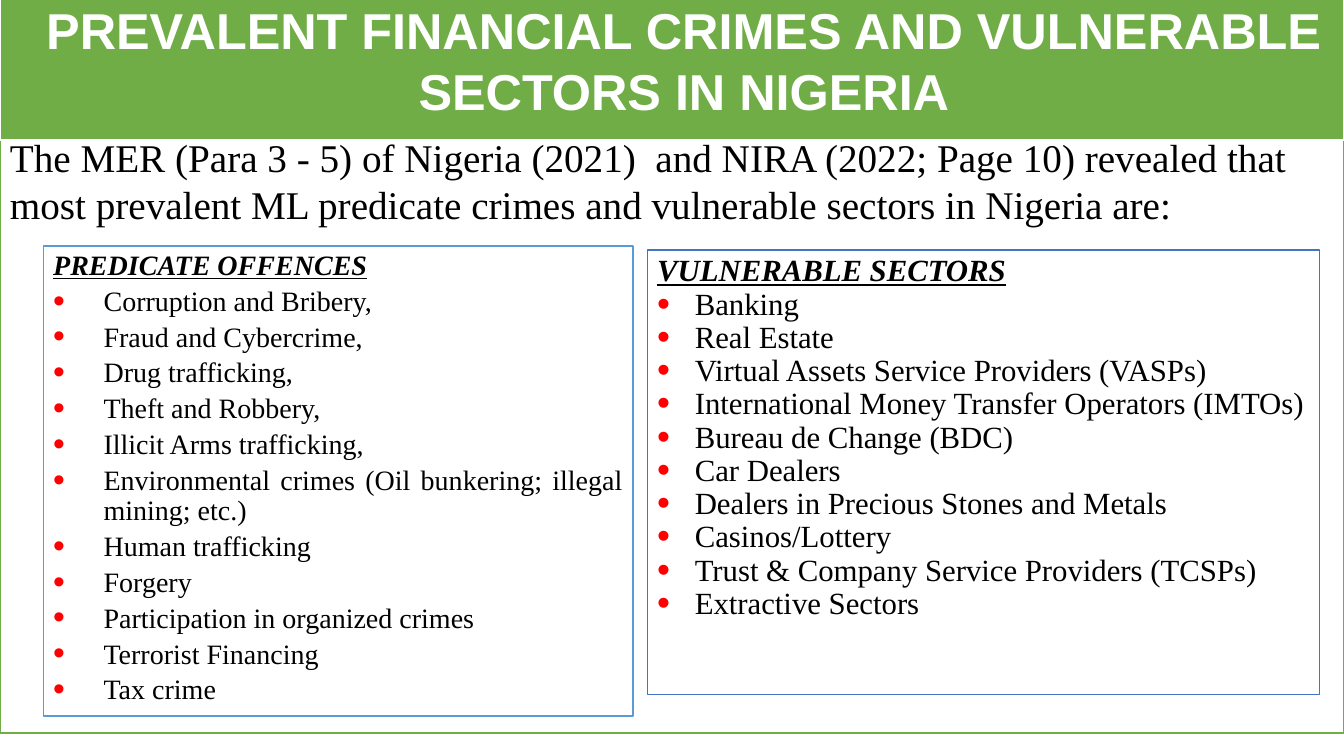
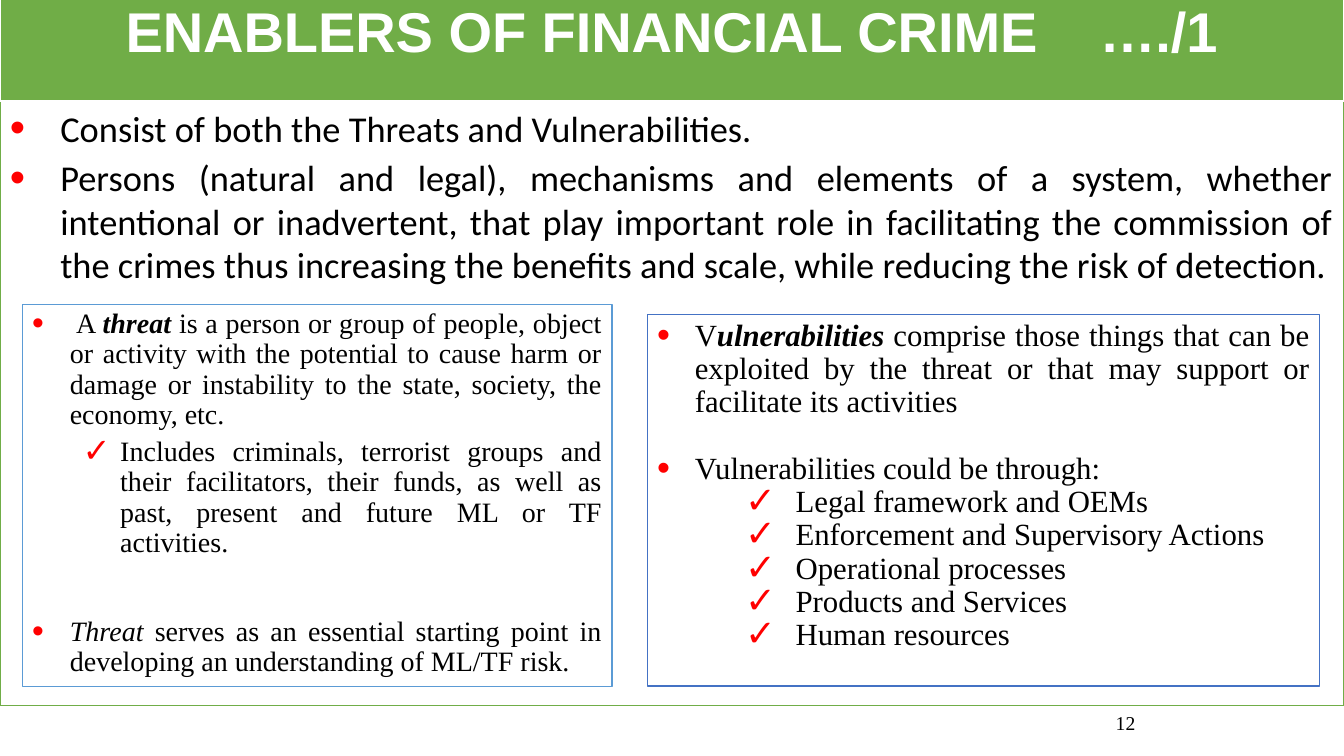
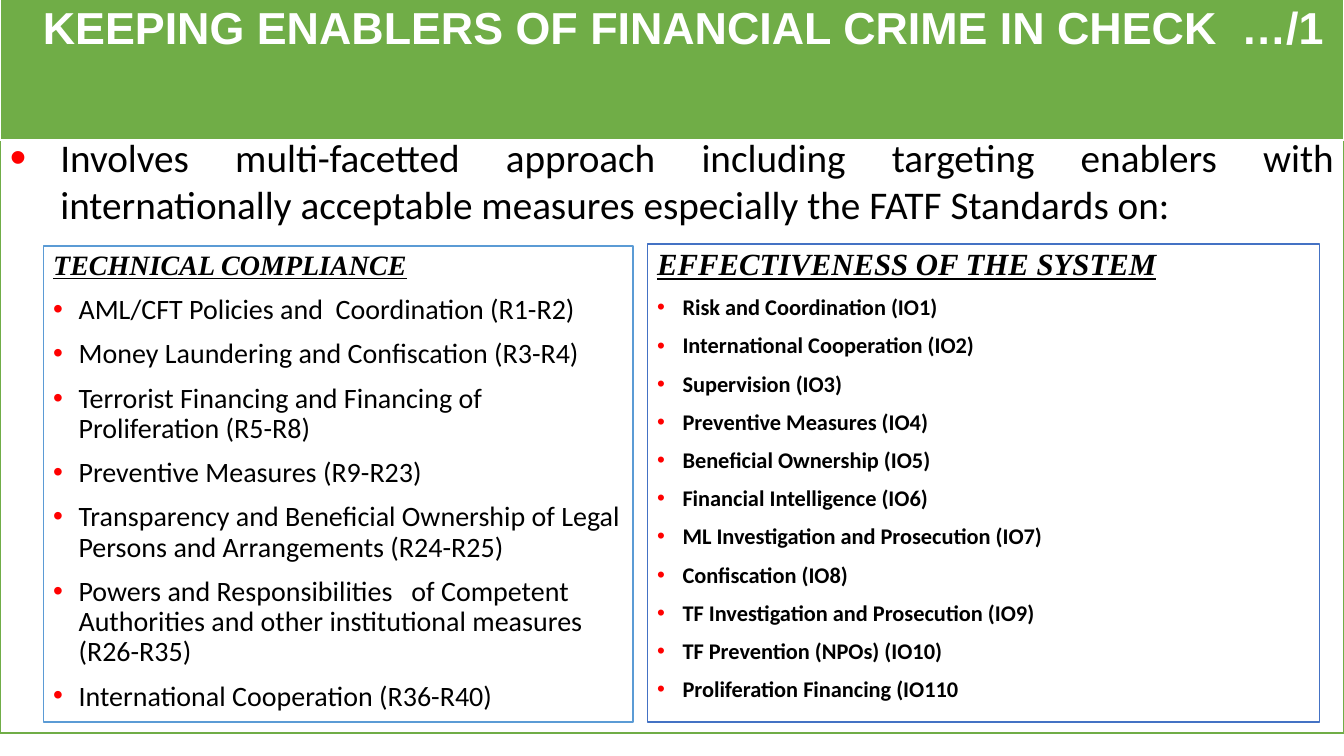
from lxml import etree
from pptx import Presentation
from pptx.dml import color
from pptx.enum import text
from pptx.oxml import ns
from pptx.util import Cm, Pt

COLOURS = {"band": "70AD47", "paper": "FFFFFF", "ink": "000000", "bullet": "FF0000",
           "left": "5B9BD5", "right": "4472C4"}
SERIF, SANS, TITLE_FONT = "Times New Roman", "Calibri", "Arial"
WIDTH, HEIGHT = 33.87, 19.05
BAND_TOP = -0.43
ALIGN = text.PP_ALIGN


def style(size, font=SERIF, before=0, spacing=0.9, bullet=None, margin=0, hang=None,
          scale=120, align=ALIGN.JUSTIFY, level=0, **span_format):
    """Describe a paragraph: its spacing, its bullet and its font."""
    return {
        "para": {"alignment": align, "line_spacing": spacing, "level": level,
                 "space_before": Pt(before), "space_after": Pt(0)},
        "font": {"name": font, "size": Pt(size), "bold": False, "italic": False,
                 "underline": False, **span_format},
        "bullet": bullet, "scale": scale, "margin": margin,
        "hang": margin if hang is None else hang,
    }


STRONG = {"bold": True, "italic": True}
HEADING = {**STRONG, "underline": True}
DOT, TICK = "•", "✓"
LEFT_HEAD = style(20, before=4, **HEADING)
RIGHT_HEAD = style(22, **HEADING)
OFFENCE = style(20, before=4, bullet=DOT, margin=1.27)
SECTOR = style(22, bullet=DOT, margin=0.95)
SECTOR_APART = style(22, before=24, bullet=DOT, margin=0.95)
SECTOR_TICK = style(22, bullet=TICK, margin=3.49, hang=1.27, level=1)
THREAT = style(20, before=10, bullet=DOT, margin=0.95)
THREAT_APART = style(20, before=42, bullet=DOT, margin=0.95)
THREAT_TICK = style(20, before=5, bullet=TICK, margin=2.22, hang=0.95, level=1)
MEASURE = style(20, SANS, 10, bullet=DOT, margin=0.64, scale=100, align=ALIGN.LEFT)
OUTCOME = style(16, SANS, 10, bullet=DOT, margin=0.64, scale=100, align=ALIGN.LEFT,
                bold=True)


def rgb(name):
    return color.RGBColor.from_string(COLOURS[name])


def set_bullet(para, look):
    """Set the hanging indent and the bullet, or switch the bullet off."""
    props = para._p.get_or_add_pPr()
    props.set("marL", str(Cm(look["margin"])))
    props.set("indent", str(-Cm(look["hang"])))
    if not look["bullet"]:
        etree.SubElement(props, ns.qn("a:buNone"))
        return
    holder = etree.SubElement(props, ns.qn("a:buClr"))
    etree.SubElement(holder, ns.qn("a:srgbClr"), val=COLOURS["bullet"])
    etree.SubElement(props, ns.qn("a:buSzPct"), val=str(look["scale"] * 1000))
    etree.SubElement(props, ns.qn("a:buFont"), typeface="Arial")
    etree.SubElement(props, ns.qn("a:buChar"), char=look["bullet"])


def write(shape, lines, ink="ink", insets=(0.25, 0.13, 0.25, 0.13)):
    """Fill a shape with lines: pairs of a style and a text or a list of spans."""
    frame = shape.text_frame
    settings = {"word_wrap": True, "auto_size": text.MSO_AUTO_SIZE.NONE,
                "vertical_anchor": text.MSO_ANCHOR.TOP}
    sides = ("margin_left", "margin_top", "margin_right", "margin_bottom")
    settings.update(zip(sides, map(Cm, insets)))
    for name, value in settings.items():
        setattr(frame, name, value)
    for number, (look, content) in enumerate(lines):
        para = frame.add_paragraph() if number else frame.paragraphs[0]
        for name, value in look["para"].items():
            setattr(para, name, value)
        set_bullet(para, look)
        for words, extra in [(content, {})] if isinstance(content, str) else content:
            span = para.add_run()
            span.text = words
            for name, value in {**look["font"], **extra}.items():
                setattr(span.font, name, value)
            span.font.color.rgb = rgb(ink)


def frame_box(shape, box, fill, line, weight=1):
    for name, value in zip(("left", "top", "width", "height"), box):
        setattr(shape, name, Cm(value))
    shape.fill.solid()
    shape.fill.fore_color.rgb = rgb(fill)
    shape.line.color.rgb = rgb(line)
    shape.line.width = Pt(weight)


def title_band(title, words, size, height, shift, drop):
    frame_box(title, (0, BAND_TOP, WIDTH, height), "band", "paper", 1.5)
    look = style(size, TITLE_FONT, spacing=1.0, align=ALIGN.CENTER, bold=True)
    write(title, [(look, words)], "paper", (0.25 + shift, drop, max(0.25 - shift, 0), 0))


def page_number(page, number):
    box = page.shapes.add_textbox(Cm(25.4), Cm(17.78), Cm(5.93), Cm(1.27))
    write(box, [(style(14, spacing=1.0, align=ALIGN.CENTER), number)])


def two_panel_page(deck, title, intro, intro_top, left, right):
    """Title band, framed introduction and two framed lists."""
    page = deck.slides.add_slide(deck.slide_layouts.get_by_name("Comparison"))
    slots = {slot.placeholder_format.idx: slot for slot in page.placeholders}
    slots[3].element.getparent().remove(slots[3].element)
    # Introduction, with the band lying over its top edge
    frame_box(slots[1], (0, intro_top, WIDTH, 15.24), "paper", "band")
    write(slots[1], intro)
    title_band(slots[0], **title)
    slots[1].element.addnext(slots[0].element)
    # Lists
    for slot, line, (box, lines) in ((slots[2], "left", left), (slots[4], "right", right)):
        frame_box(slot, box, "paper", line)
        write(slot, lines)
    return page


def listing(heading, look, items):
    return [heading] + [(look, item) for item in items]


def crimes_page(deck):
    offences = ["Corruption and Bribery,", "Fraud and Cybercrime,", "Drug trafficking,",
                "Theft and Robbery,", "Illicit Arms trafficking,",
                "Environmental crimes (Oil bunkering; illegal mining; etc.)",
                "Human trafficking", "Forgery", "Participation in organized crimes",
                "Terrorist Financing", "Tax crime"]
    sectors = ["Banking", "Real Estate", "Virtual Assets Service Providers (VASPs)",
               "International Money Transfer Operators (IMTOs)", "Bureau de Change (BDC)",
               "Car Dealers", "Dealers in Precious Stones and Metals", "Casinos/Lottery",
               "Trust & Company Service Providers (TCSPs)", "Extractive Sectors"]
    two_panel_page(
        deck,
        {"words": "PREVALENT FINANCIAL CRIMES AND VULNERABLE SECTORS IN NIGERIA",
         "size": 36, "height": 3.96, "shift": 0.36, "drop": 0.41},
        [(style(28, spacing=1.0, align=ALIGN.LEFT),
          "The MER (Para 3 - 5) of Nigeria (2021)  and NIRA (2022; Page 10) revealed that "
          "most prevalent ML predicate crimes and vulnerable sectors in Nigeria are:")],
        3.23,
        ((1.09, 6.2, 14.86, 11.84),
         listing((LEFT_HEAD, "PREDICATE OFFENCES"), OFFENCE, offences)),
        ((16.31, 6.3, 16.94, 11.2),
         listing((RIGHT_HEAD, "VULNERABLE SECTORS"), SECTOR, sectors)))


def enablers_page(deck):
    point = style(26, SANS, 4, 1.0, DOT, 1.27)
    threats = [
        (THREAT, [(" A ", {}), ("threat ", STRONG),
                  ("is a person or group of people, object or activity with the potential "
                   "to cause harm or damage or instability to the state, society, the "
                   "economy, etc.", {})]),
        (THREAT_TICK, "Includes criminals, terrorist groups and their facilitators, their "
                      "funds, as well as past, present and future ML or TF activities."),
        (THREAT_APART, [("Threat ", {"italic": True}),
                        ("serves as an essential starting point in developing an "
                         "understanding of ML/TF risk.", {})]),
    ]
    channels = ["Legal framework and OEMs", "Enforcement and Supervisory Actions",
                "Operational processes", "Products and Services", "Human resources"]
    weaknesses = [
        (SECTOR, [("V", {}), ("ulnerabilities ", STRONG),
                  ("comprise those things that can be exploited by the threat or that may "
                   "support or facilitate its activities", {})]),
    ] + listing((SECTOR_APART, "Vulnerabilities could be through:"), SECTOR_TICK, channels)
    page = two_panel_page(
        deck,
        {"words": "ENABLERS OF FINANCIAL CRIME    …./1",
         "size": 40, "height": 2.97, "shift": 0, "drop": 0.33},
        [(point, "Consist of both the Threats and Vulnerabilities."),
         (point, "Persons (natural and legal), mechanisms and elements of a system, whether "
                 "intentional or inadvertent, that play important role in facilitating the "
                 "commission of the crimes thus increasing the benefits and scale, while "
                 "reducing the risk of detection.")],
        2.54,
        ((0.56, 7.67, 14.86, 9.63), threats),
        ((16.31, 7.92, 16.94, 9.37), weaknesses))
    page_number(page, "12")


def checks_page(deck):
    measures = ["AML/CFT Policies and  Coordination (R1-R2)",
                "Money Laundering and Confiscation (R3-R4)",
                "Terrorist Financing and Financing of Proliferation (R5-R8)",
                "Preventive Measures (R9-R23)",
                "Transparency and Beneficial Ownership of Legal Persons and Arrangements "
                "(R24-R25)",
                "Powers and Responsibilities   of Competent Authorities and other "
                "institutional measures (R26-R35)",
                "International Cooperation (R36-R40)"]
    outcomes = ["Risk and Coordination (IO1)", "International Cooperation (IO2)",
                "Supervision (IO3)", "Preventive Measures (IO4)",
                "Beneficial Ownership (IO5)", "Financial Intelligence (IO6)",
                "ML Investigation and Prosecution (IO7)", "Confiscation (IO8)",
                "TF Investigation and Prosecution (IO9)", "TF Prevention (NPOs) (IO10)",
                "Proliferation Financing (IO110"]
    two_panel_page(
        deck,
        {"words": "KEEPING ENABLERS OF FINANCIAL CRIME IN CHECK  …/1",
         "size": 32, "height": 3.96, "shift": 0.36, "drop": 0.41},
        [(style(28, SANS, 4, 1.0, DOT, 1.27),
          "Involves multi-facetted approach including targeting enablers with "
          "internationally acceptable measures especially the FATF Standards on:")],
        3.23,
        ((1.09, 6.2, 14.86, 11.99),
         listing((LEFT_HEAD, "TECHNICAL COMPLIANCE"), MEASURE, measures)),
        ((16.31, 6.15, 16.94, 12.04),
         listing((RIGHT_HEAD, "EFFECTIVENESS OF THE SYSTEM"), OUTCOME, outcomes)))


def main():
    deck = Presentation()
    deck.slide_width, deck.slide_height = Cm(WIDTH), Cm(HEIGHT)
    for build in (crimes_page, enablers_page, checks_page):
        build(deck)
    deck.save("out.pptx")


if __name__ == "__main__":
    main()
